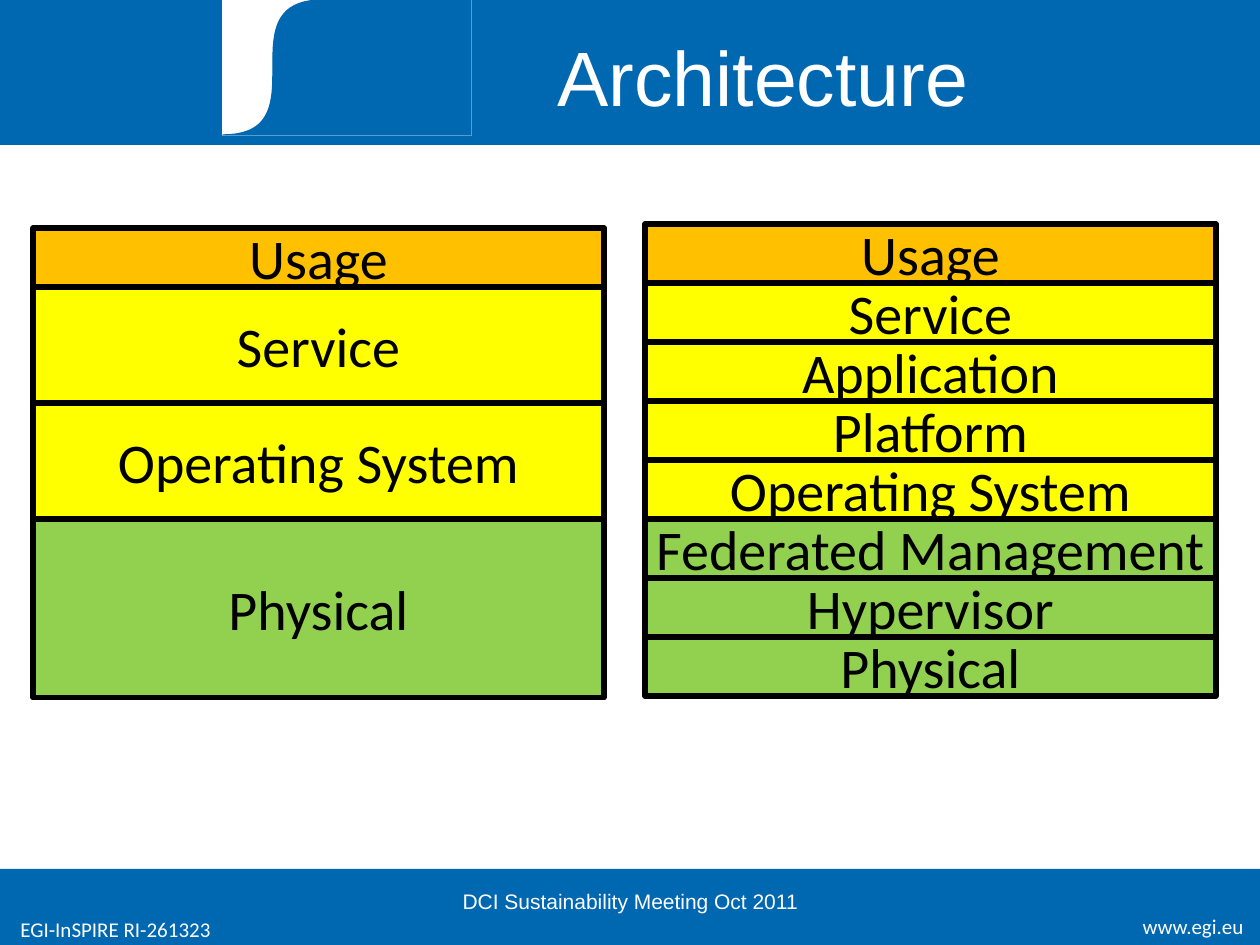
from pptx import Presentation
from pptx.dml.color import RGBColor
from pptx.enum.shapes import MSO_SHAPE
from pptx.enum.text import MSO_ANCHOR, PP_ALIGN
from pptx.util import Pt

RECTANGLE = MSO_SHAPE.RECTANGLE
LEFT, CENTER, RIGHT = PP_ALIGN.LEFT, PP_ALIGN.CENTER, PP_ALIGN.RIGHT
TOP, MIDDLE = MSO_ANCHOR.TOP, MSO_ANCHOR.MIDDLE

EMU_PER_PX = 914400 / 126
COLORS = {
    "blue": "0067B1",
    "white": "FFFFFF",
    "black": "000000",
    "orange": "FFC000",
    "yellow": "FFFF00",
    "green": "92D050",
}
LAYER_WIDTH = 571
LAYER_HEIGHT = 59
SERVER_LAYERS = [
    ("Usage", "orange", LAYER_HEIGHT),
    ("Service", "yellow", 116),
    ("Operating System", "yellow", 116),
    ("Physical", "green", 179),
]
CLOUD_LAYERS = [
    ("Usage", "orange", LAYER_HEIGHT),
    ("Service", "yellow", LAYER_HEIGHT),
    ("Application", "yellow", LAYER_HEIGHT),
    ("Platform", "yellow", LAYER_HEIGHT),
    ("Operating System", "yellow", LAYER_HEIGHT),
    ("Federated Management", "green", LAYER_HEIGHT),
    ("Hypervisor", "green", LAYER_HEIGHT),
    ("Physical", "green", LAYER_HEIGHT),
]


def px(length):
    return round(length * EMU_PER_PX)


def color(name):
    return RGBColor.from_string(COLORS[name])


def paint(shape, fill, line=None, line_width=0.75):
    shape.shadow.inherit = False
    shape.fill.solid()
    shape.fill.fore_color.rgb = color(fill)
    if line:
        shape.line.color.rgb = color(line)
        shape.line.width = Pt(line_width)
    else:
        shape.line.fill.background()


def write(shape, text, size, font, ink, align, anchor):
    frame = shape.text_frame
    frame.word_wrap = True
    frame.vertical_anchor = anchor
    frame.text = text
    paragraph = frame.paragraphs[0]
    paragraph.alignment = align
    style = paragraph.runs[0].font
    style.size = Pt(size)
    style.name = font
    style.color.rgb = color(ink)


def add_panel(slide, box, fill, line=None, line_width=0.75):
    panel = slide.shapes.add_shape(RECTANGLE, *map(px, box))
    paint(panel, fill, line, line_width)
    return panel


def add_label(slide, box, text, size, font, align=CENTER, anchor=MIDDLE):
    label = slide.shapes.add_textbox(*map(px, box))
    write(label, text, size, font, "white", align, anchor)


def bezier(start, control_1, control_2, end, steps=40):
    for step in range(steps + 1):
        t = step / steps
        weights = ((1 - t) ** 3, 3 * t * (1 - t) ** 2, 3 * t**2 * (1 - t), t**3)
        yield tuple(
            sum(w * c for w, c in zip(weights, axis))
            for axis in zip(start, control_1, control_2, end)
        )


def add_header_curve(slide):
    curve = bezier((223, 135), (323, 135), (223, 0), (323, 0))
    outline = slide.shapes.build_freeform(px(471), 0)
    corners = [(471, 135), *curve]
    outline.add_line_segments([(px(x), px(y)) for x, y in corners], close=True)
    paint(outline.convert_to_shape(), "blue", "blue")


def add_stack(slide, left, top, layers):
    for text, fill, height in layers:
        layer = add_panel(slide, (left, top, LAYER_WIDTH, height), fill, "black", 3)
        frame = layer.text_frame
        frame.margin_left = frame.margin_right = 0
        frame.margin_top = frame.margin_bottom = 0
        write(layer, text, 32, "Calibri", "black", CENTER, MIDDLE)
        top += height


def main():
    presentation = Presentation()
    presentation.slide_width = px(1260)
    presentation.slide_height = px(945)
    slide = presentation.slides.add_slide(presentation.slide_layouts[6])

    add_panel(slide, (0, 869, 1260, 76), "blue")
    add_panel(slide, (0, 0, 1260, 144), "blue", "blue")
    add_panel(slide, (223, 0, 248, 135), "white", "white")
    add_header_curve(slide)

    add_label(slide, (1057, 907, 199, 39), "www.egi.eu", 12, "Calibri", RIGHT, TOP)
    add_label(slide, (8, 910, 315, 39), "EGI-InSPIRE RI-261323", 12, "Calibri", LEFT, TOP)
    add_label(slide, (292, 16, 942, 120), "Architecture", 44, "Arial")
    add_stack(slide, 645, 224, CLOUD_LAYERS)
    add_stack(slide, 33, 228, SERVER_LAYERS)
    add_label(slide, (431, 876, 399, 50), "DCI Sustainability Meeting Oct 2011", 12, "Arial")

    presentation.save("out.pptx")


if __name__ == "__main__":
    main()
